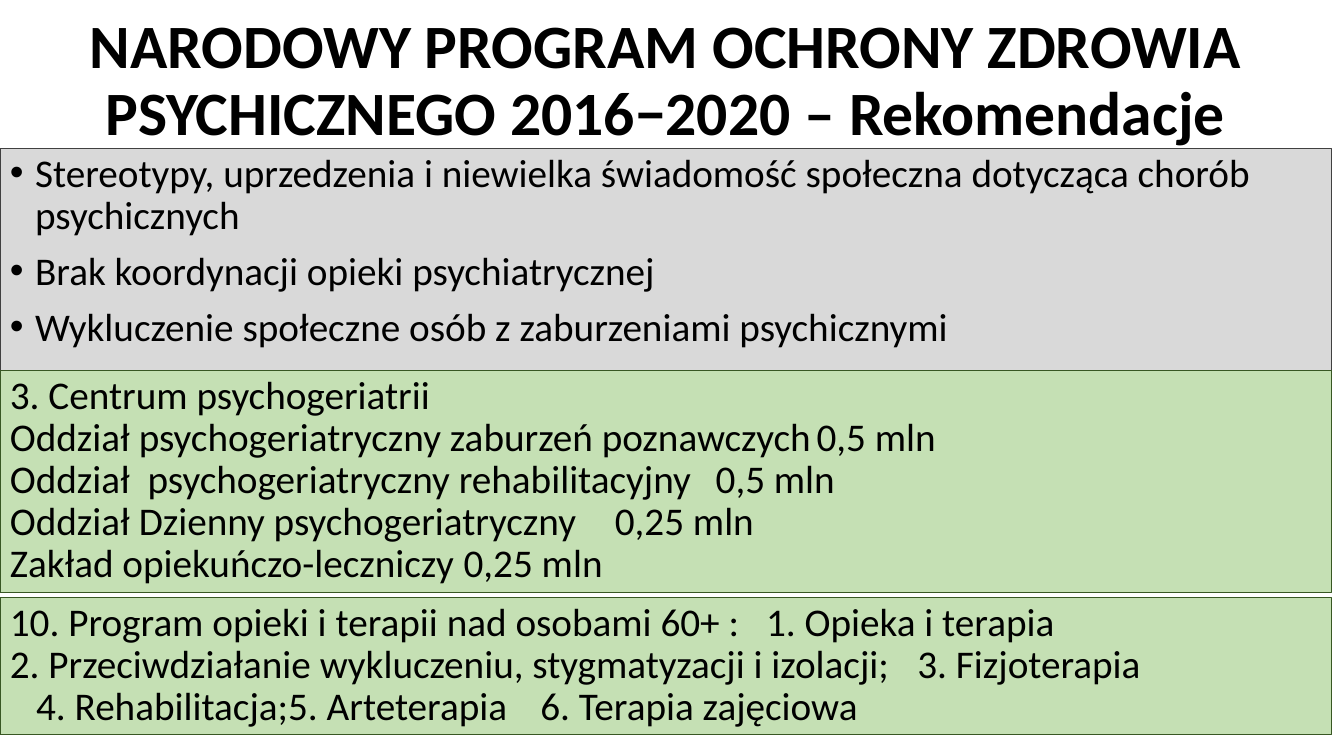
from dataclasses import dataclass

from lxml import etree
from pptx import Presentation
from pptx.dml.color import RGBColor
from pptx.enum.shapes import MSO_SHAPE
from pptx.enum.text import MSO_ANCHOR, PP_ALIGN
from pptx.oxml.ns import qn
from pptx.util import Pt

RECT = MSO_SHAPE.RECTANGLE
TOP, MIDDLE = MSO_ANCHOR.TOP, MSO_ANCHOR.MIDDLE
LEFT, CENTER = PP_ALIGN.LEFT, PP_ALIGN.CENTER
EMU_PER_PX = 9144
SLIDE_W, SLIDE_H = 1333, 750
PANEL_W = 1321


def px(n):
    return n * EMU_PER_PX


@dataclass(frozen=True)
class Theme:
    font: str = "Calibri"
    title: int = 44
    body: int = 28
    leading: int = 30
    gap: int = 10
    ink: str = "000000"
    gray: str = "D9D9D9"
    gray_line: str = "404040"
    green: str = "C5E0B4"
    green_line: str = "385723"


THEME = Theme()


def add_text(p, text, size=THEME.body, bold=False, align=LEFT, leading=Pt(THEME.leading),
             before=0, margin=0, bullet=None, tabs=()):
    p.alignment = align
    p.line_spacing = leading
    p.space_before = Pt(before)
    pPr = p._p.get_or_add_pPr()
    pPr.set("marL", str(px(margin)))
    pPr.set("indent", str(px(-margin if bullet else 0)))
    if bullet:
        etree.SubElement(pPr, qn("a:buFont"), typeface="Arial")
        etree.SubElement(pPr, qn("a:buChar"), char=bullet)
    if tabs:
        tab_list = etree.SubElement(pPr, qn("a:tabLst"))
        for pos in tabs:
            etree.SubElement(tab_list, qn("a:tab"), pos=str(px(pos)), algn="l")
    r = p.add_run()
    r.text = text
    r.font.name = THEME.font
    r.font.size = Pt(size)
    r.font.bold = bold
    r.font.color.rgb = RGBColor.from_string(THEME.ink)


class Deck:
    def __init__(self, theme):
        self.theme = theme
        self.prs = Presentation()
        self.prs.slide_width, self.prs.slide_height = px(SLIDE_W), px(SLIDE_H)
        self.s = self.prs.slides.add_slide(self.prs.slide_layouts[6])

    def fill_frame(self, tf, items, anchor):
        tf.word_wrap = True
        tf.vertical_anchor = anchor
        for i, (text, style) in enumerate(items):
            p = tf.add_paragraph() if i else tf.paragraphs[0]
            add_text(p, text, **style)

    def title(self, text, y, h):
        sp = self.s.shapes.add_textbox(0, px(y), px(PANEL_W), px(h))
        style = dict(size=self.theme.title, bold=True, align=CENTER, leading=0.9)
        self.fill_frame(sp.text_frame, [(text, style)], MIDDLE)

    def panel(self, y, h, fill, line, items):
        sp = self.s.shapes.add_shape(RECT, 0, px(y), px(PANEL_W), px(h))
        sp.shadow.inherit = False
        sp.fill.solid()
        sp.fill.fore_color.rgb = RGBColor.from_string(fill)
        sp.line.color.rgb = RGBColor.from_string(line)
        sp.line.width = Pt(0.75)
        self.fill_frame(sp.text_frame, items, TOP)

    def save(self):
        self.prs.save("out.pptx")


PROBLEMS = [
    "Stereotypy, uprzedzenia i niewielka świadomość społeczna dotycząca chorób psychicznych",
    "Brak koordynacji opieki psychiatrycznej",
    "Wykluczenie społeczne osób z zaburzeniami psychicznymi",
]
COSTS = [
    ("Oddział psychogeriatryczny zaburzeń poznawczych", "0,5 mln"),
    ("Oddział  psychogeriatryczny rehabilitacyjny", "0,5 mln"),
    ("Oddział Dzienny psychogeriatryczny", "0,25 mln"),
    ("Zakład opiekuńczo-leczniczy", "0,25 mln"),
]
CARE_PROGRAM = [
    ("10. Program opieki i terapii nad osobami 60+ :\t1. Opieka i terapia", dict(tabs=(751,))),
    ("2. Przeciwdziałanie wykluczeniu, stygmatyzacji i izolacji;\t3. Fizjoterapia",
     dict(tabs=(899,))),
    ("4. Rehabilitacja;\t5. Arteterapia\t6. Terapia zajęciowa",
     dict(margin=26, tabs=(295, 538))),
]


def main():
    t = THEME
    deck = Deck(t)
    deck.title("NARODOWY PROGRAM OCHRONY ZDROWIA PSYCHICZNEGO 2016−2020 – Rekomendacje", 9, 145)
    bullet_style = dict(before=t.gap, margin=25, bullet="•")
    deck.panel(147, 232, t.gray, t.gray_line, [(text, bullet_style) for text in PROBLEMS])
    center = [("3. Centrum psychogeriatrii", {})]
    center += [(f"{unit}\t{cost}", dict(tabs=(900,))) for unit, cost in COSTS]
    deck.panel(368, 220, t.green, t.green_line, center)
    deck.panel(593, 136, t.green, t.green_line, CARE_PROGRAM)
    deck.save()


if __name__ == "__main__":
    main()
